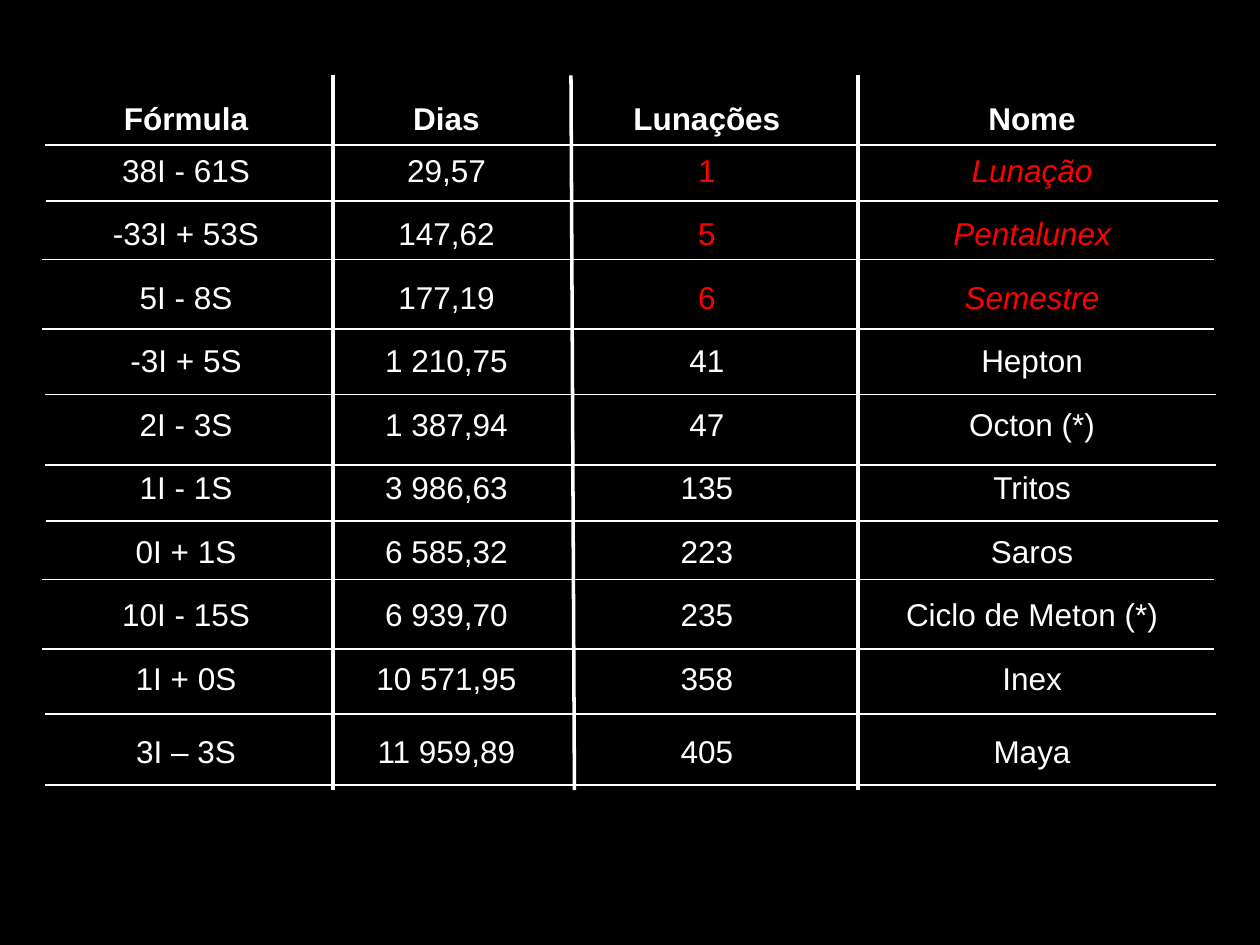
from dataclasses import dataclass
from pptx import Presentation as Deck
from pptx.dml.color import RGBColor as Rgb
from pptx.enum.shapes import MSO_CONNECTOR as Link
from pptx.enum.text import MSO_ANCHOR as Anchor, PP_ALIGN as Align
from pptx.oxml.ns import qn
from pptx.slide import Slide
from pptx.util import Cm, Pt
from lxml.etree import SubElement as Sub


@dataclass(frozen=True)
class Theme:
    back: Rgb = Rgb(0, 0, 0)
    ink: Rgb = Rgb(255, 255, 255)
    mark: Rgb = Rgb(255, 0, 0)
    font: str = "Arial"
    size: int = 18
    thin: float = 1
    thick: float = 2


@dataclass(frozen=True)
class Cycle:
    code: str
    days: str
    moons: str
    name: str
    red: bool = False


@dataclass(frozen=True)
class Rule:
    left: float
    top: float
    right: float
    base: float
    width: float


THEME = Theme()
NO_STYLE = "{2D5ABB26-0587-4C30-8999-92F81FD0307C}"
HEAD = Cycle("Fórmula", "Dias", "Lunações", "Nome")
CYCLES = [
    Cycle("38I - 61S", "29,57", "1", "Lunação", True),
    Cycle("-33I + 53S", "147,62", "5", "Pentalunex", True),
    Cycle("5I - 8S", "177,19", "6", "Semestre", True),
    Cycle("-3I + 5S", "1 210,75", "41", "Hepton"),
    Cycle("2I - 3S", "1 387,94", "47", "Octon (*)"),
    Cycle("1I - 1S", "3 986,63", "135", "Tritos"),
    Cycle("0I + 1S", "6 585,32", "223", "Saros"),
    Cycle("10I - 15S", "6 939,70", "235", "Ciclo de Meton (*)"),
    Cycle("1I + 0S", "10 571,95", "358", "Inex"),
    Cycle("3I – 3S", "11 959,89", "405", "Maya"),
]
COLS = [5.72, 4.78, 5.72, 7.39]
ROWS = [1.04] + [1.28] * 8 + [1.47, 1.45]
STARTS = [(0.9, 2.92), (0.93, 4.06), (0.85, 5.23), (0.85, 6.63), (0.9, 7.95)]
PERIOD, SPAN = 6.45, 23.62
POSTS = [(6.71, 6.71), (11.51, 11.58), (17.3, 17.3)]
TOP, BASE = 1.52, 15.93


def apply(item: object, form: dict) -> None:
    for key, value in form.items():
        setattr(item, key, value)


def fill_cell(cell, text: str, bold: bool, red: bool, slant: bool) -> None:
    pad = Cm(0.13)
    apply(cell, dict(text=text, vertical_anchor=Anchor.TOP, margin_left=pad,
                     margin_right=pad, margin_top=pad, margin_bottom=pad))
    cell.fill.background()
    para = cell.text_frame.paragraphs[0]
    para.alignment = Align.CENTER
    font = para.runs[0].font
    apply(font, dict(name=THEME.font, size=Pt(THEME.size), bold=bold, italic=slant))
    font.color.rgb = THEME.mark if red else THEME.ink


def draw_table(slide: Slide) -> None:
    frame = slide.shapes.add_table(len(ROWS), len(COLS), Cm(0.89), Cm(1.93),
                                   Cm(sum(COLS)), Cm(sum(ROWS)))
    table = frame.table
    apply(table, dict(first_row=False, horz_banding=False))
    table._tbl.tblPr.find(qn("a:tableStyleId")).text = NO_STYLE
    for col, width in zip(table.columns, COLS):
        col.width = Cm(width)
    for row, height, item in zip(table.rows, ROWS, [HEAD, *CYCLES]):
        row.height = Cm(height)
        texts = [item.code, item.days, item.moons, item.name]
        for i, (cell, text) in enumerate(zip(row.cells, texts)):
            fill_cell(cell, text, item is HEAD, item.red and i > 1, item.red and i == 3)


def draw_rule(slide: Slide, rule: Rule) -> None:
    line = slide.shapes.add_connector(Link.STRAIGHT, Cm(rule.left), Cm(rule.top),
                                      Cm(rule.right), Cm(rule.base))
    line.line.color.rgb = THEME.ink
    line.line.width = Pt(rule.width)
    Sub(line._element.spPr, qn("a:effectLst"))


def main() -> None:
    deck = Deck()
    apply(deck, dict(slide_width=Cm(25.4), slide_height=Cm(19.05)))
    slide = deck.slides.add_slide(deck.slide_layouts[6])
    back = slide.background.fill
    back.solid()
    back.fore_color.rgb = THEME.back
    draw_table(slide)
    for i in range(len(ROWS)):
        turn, step = divmod(i, len(STARTS))
        left, top = STARTS[step]
        y = top + turn * PERIOD
        draw_rule(slide, Rule(left, y, left + SPAN, y, THEME.thin))
    for head, foot in POSTS:
        draw_rule(slide, Rule(head, TOP, foot, BASE, THEME.thick))
    deck.save("out.pptx")


if __name__ == "__main__":
    main()
